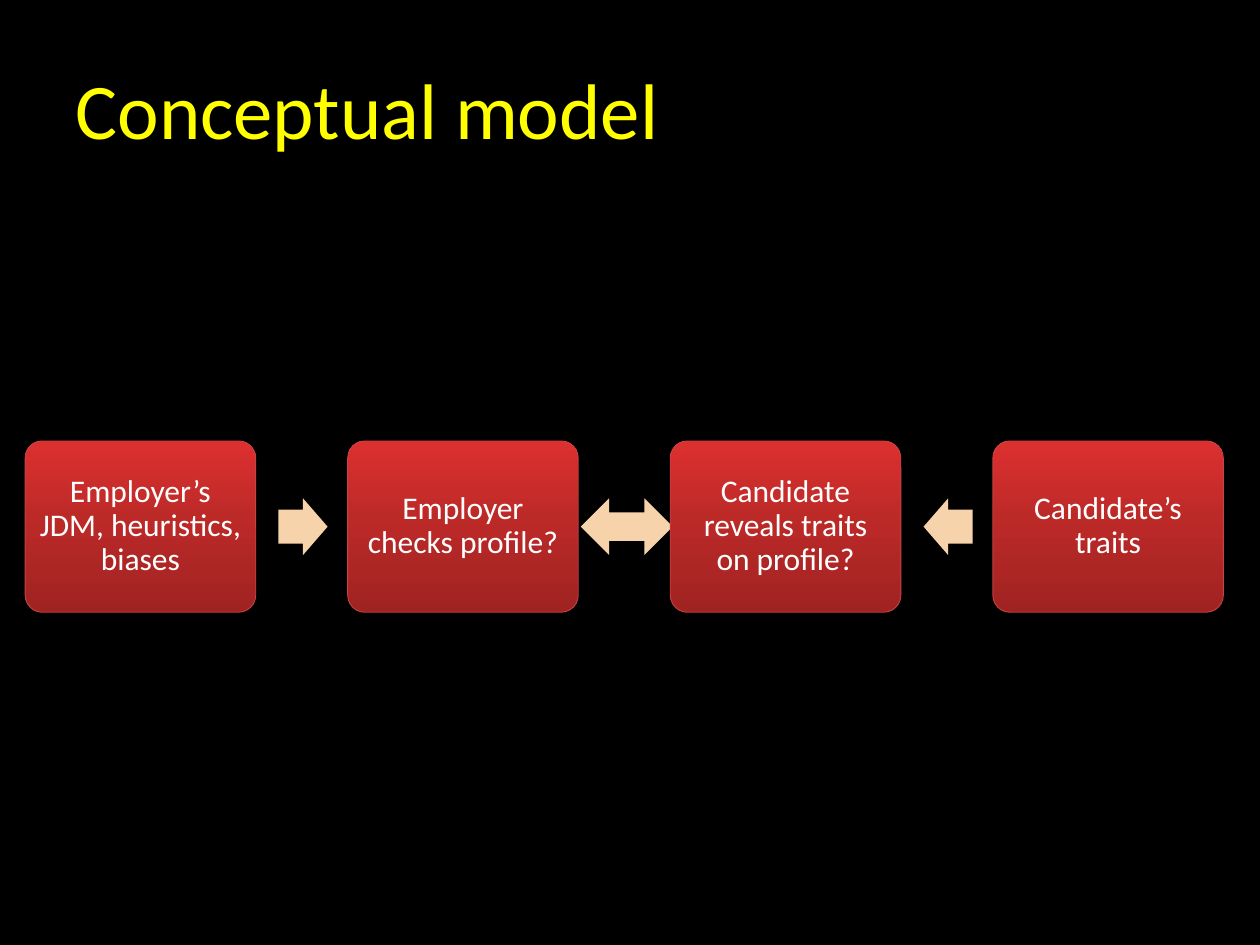
from copy import deepcopy

from pptx import Presentation
from pptx import util as u
from pptx.dml.color import RGBColor
from pptx.enum import shapes, text
from pptx.oxml.ns import qn

BLACK = RGBColor(0x00, 0x00, 0x00)
YELLOW = RGBColor(0xFF, 0xFF, 0x00)
WHITE = RGBColor(0xFF, 0xFF, 0xFF)
OUTLINE = RGBColor(0xC5, 0x43, 0x42)
PEACH = RGBColor(0xF6, 0xD3, 0xAB)
# Gradient from the bottom of a box to its top
REDS = [
    (0, RGBColor(0xA0, 0x23, 0x22)),
    (0.55, RGBColor(0xBC, 0x2A, 0x28)),
    (1, RGBColor(0xDC, 0x30, 0x2F)),
]
SHAPE = shapes.MSO_SHAPE


class Deck:
    font = "Calibri"

    def __init__(self, prs):
        self.s = prs.slides.add_slide(prs.slide_layouts[5])
        fill = self.s.background.fill
        fill.solid()
        fill.fore_color.rgb = BLACK

    def label(self, tf, words, size, color, align, insets):
        tf.text = words
        tf.word_wrap = True
        tf.vertical_anchor = text.MSO_ANCHOR.MIDDLE
        tf.margin_left, tf.margin_top, tf.margin_right, tf.margin_bottom = map(u.Inches, insets)
        p = tf.paragraphs[0]
        p.alignment = align
        f = p.runs[0].font
        f.name, f.size, f.color.rgb = self.font, u.Pt(size), color
        return p

    def title(self, words, *box):
        sp = self.s.shapes.title
        sp.left, sp.top, sp.width, sp.height = map(u.Inches, box)
        self.label(sp.text_frame, words, 45, YELLOW, text.PP_ALIGN.LEFT,
                   (0.1, 0.05, 0.05, 0.05))

    def shape(self, kind, box, adjustments):
        sp = self.s.shapes.add_shape(kind, *map(u.Inches, box))
        sp.shadow.inherit = False
        for i, value in enumerate(adjustments):
            sp.adjustments[i] = value
        return sp

    def box(self, words, *box):
        sp = self.shape(SHAPE.ROUNDED_RECTANGLE, box, [0.1])
        sp.fill.gradient()
        sp.fill.gradient_angle = 90
        # The default gradient has two stops, so add a third
        stops = sp._element.spPr.find(qn("a:gradFill")).find(qn("a:gsLst"))
        stops.append(deepcopy(stops[-1]))
        for stop, (position, color) in zip(sp.fill.gradient_stops, REDS):
            stop.position = position
            stop.color.rgb = color
        sp.line.color.rgb = OUTLINE
        sp.line.width = u.Pt(0.5)
        p = self.label(sp.text_frame, words, 18, WHITE, text.PP_ALIGN.CENTER, [0.07] * 4)
        p.line_spacing = 0.9

    def arrow(self, kind, box, adjustments):
        sp = self.shape(kind, box, adjustments)
        sp.fill.solid()
        sp.fill.fore_color.rgb = PEACH
        sp.line.fill.background()


def main():
    prs = Presentation()
    prs.slide_width, prs.slide_height = u.Inches(10), u.Inches(7.5)
    deck = Deck(prs)
    deck.title("Conceptual model", 0.5, 0.17, 9, 1.37)

    # Row of boxes with an arrow in each gap
    left, top, width, height, pitch = 0.2, 3.5, 1.83, 1.36, 2.56
    steps = [
        "Employer’s JDM, heuristics, biases",
        "Employer checks profile?",
        "Candidate reveals traits on profile?",
        "Candidate’s traits",
    ]
    # Kind, offset from the box before it, width, adjustments
    arrows = [
        (SHAPE.RIGHT_ARROW, 0.18, 0.39, (0.6, 0.5)),
        (SHAPE.LEFT_RIGHT_ARROW, 0.02, 0.73, (0.5, 0.5)),
        (SHAPE.LEFT_ARROW, 0.18, 0.39, (0.6, 0.5)),
    ]
    arrow_height = 0.45
    arrow_top = top + (height - arrow_height) / 2
    for i, words in enumerate(steps):
        x = left + i * pitch
        deck.box(words, x, top, width, height)
        if i < len(arrows):
            kind, offset, arrow_width, adjustments = arrows[i]
            deck.arrow(kind, (x + width + offset, arrow_top, arrow_width, arrow_height),
                       adjustments)

    prs.save("out.pptx")


if __name__ == "__main__":
    main()
